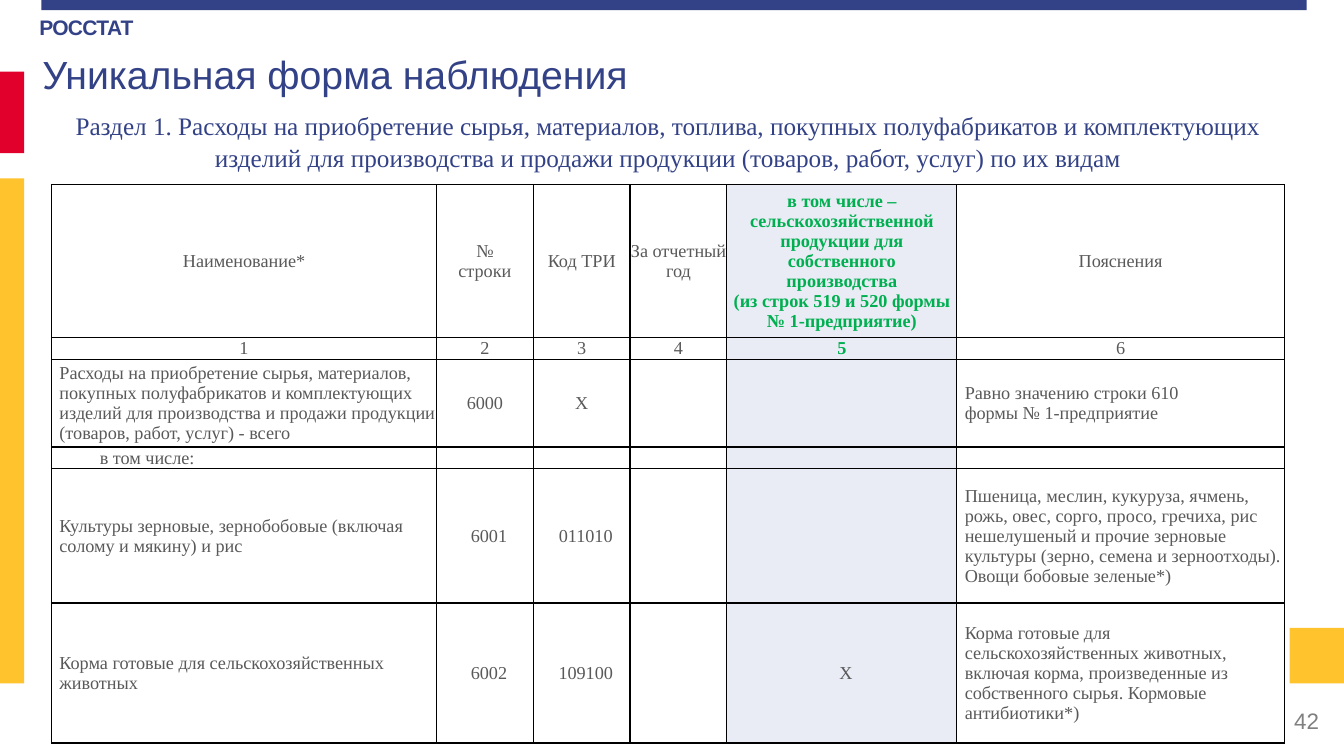
from lxml import etree
from pptx import Presentation
from pptx.dml.color import RGBColor
from pptx.enum.shapes import MSO_SHAPE
from pptx.enum.text import MSO_ANCHOR, MSO_AUTO_SIZE, PP_ALIGN
from pptx.oxml.ns import qn
from pptx.util import Inches, Pt

LEFT, CENTER, RIGHT = PP_ALIGN.LEFT, PP_ALIGN.CENTER, PP_ALIGN.RIGHT
MIDDLE = MSO_ANCHOR.MIDDLE
RECT = MSO_SHAPE.RECTANGLE

NAVY = RGBColor(0x33, 0x42, 0x86)
RED = RGBColor(0xE1, 0x00, 0x2B)
YELLOW = RGBColor(0xFF, 0xC3, 0x2E)
GRAY = RGBColor(0x80, 0x80, 0x80)
DARK_GRAY = RGBColor(0x59, 0x59, 0x59)
GREEN = RGBColor(0x00, 0xB0, 0x50)
PALE_BLUE = RGBColor(0xE9, 0xEB, 0xF5)
WHITE = RGBColor(0xFF, 0xFF, 0xFF)

SANS, SERIF = "Arial", "Times New Roman"
CELL_SIZE = 13


def write(p, text, align, font, size, color, bold=False):
    p.text = text
    p.alignment = align
    for r in p.runs:
        for name, value in dict(name=font, size=Pt(size), bold=bold).items():
            setattr(r.font, name, value)
        r.font.color.rgb = color


def add_borders(cell):
    """Give all four sides a thin black line, placed before the cell fill."""
    tc_pr = cell._tc.get_or_add_tcPr()
    for i, side in enumerate(("lnL", "lnR", "lnT", "lnB")):
        ln = etree.Element(qn(f"a:{side}"), w=str(Pt(1)))
        fill = etree.SubElement(ln, qn("a:solidFill"))
        etree.SubElement(fill, qn("a:srgbClr"), val="000000")
        tc_pr.insert(i, ln)


prs = Presentation()
prs.slide_width, prs.slide_height = Inches(13.33), Inches(7.5)
s = prs.slides.add_slide(prs.slide_layouts[1])

# Coloured bars at the edges
for x, y, w, h, color in [
    (0.41, 0, 12.55, 0.1, NAVY),
    (0, 0.71, 0.24, 0.81, RED),
    (0, 1.77, 0.24, 5.01, YELLOW),
    (12.79, 6.23, 0.54, 0.55, YELLOW),
]:
    bar = s.shapes.add_shape(RECT, Inches(x), Inches(y), Inches(w), Inches(h))
    bar.shadow.inherit = False
    bar.fill.solid()
    bar.fill.fore_color.rgb = color
    bar.line.fill.background()

# Agency name and page number
agency = s.shapes.add_textbox(Inches(0.39), Inches(0.13), Inches(1.15), Inches(0.32))
tf = agency.text_frame
tf.word_wrap = True
tf.margin_left = tf.margin_right = tf.margin_bottom = 0
tf.margin_top = Inches(0.01)
write(tf.paragraphs[0], "РОССТАТ", LEFT, SANS, 15, NAVY, True)
tf.paragraphs[0].runs[0].font._element.set("spc", "-50")

page = s.shapes.add_textbox(Inches(10.18), Inches(6.95), Inches(3), Inches(0.4))
page.text_frame.word_wrap = True
page.text_frame.vertical_anchor = MIDDLE
write(page.text_frame.paragraphs[0], "42", RIGHT, SANS, 16, GRAY)

# Title and section heading
section = (
    "Раздел 1. Расходы на приобретение сырья, материалов, топлива, покупных "
    "полуфабрикатов и комплектующих изделий для производства и продажи продукции "
    "(товаров, работ, услуг) по их видам"
)
for sp, y, h, text, align, font, size in [
    (s.shapes.title, 0.42, 0.6, "Уникальная форма наблюдения", LEFT, SANS, 28),
    (s.placeholders[1], 1.02, 0.74, section, CENTER, SERIF, 18),
]:
    sp.left, sp.top = Inches(0.32), Inches(y)
    sp.width, sp.height = Inches(12.61), Inches(h)
    tf = sp.text_frame
    tf.word_wrap = True
    tf.auto_size = MSO_AUTO_SIZE.NONE
    tf.vertical_anchor = MIDDLE
    p = tf.paragraphs[0]
    p_pr = p._p.get_or_add_pPr()
    p_pr.set("marL", "0")
    p_pr.set("indent", "0")
    etree.SubElement(p_pr, qn("a:buNone"))
    write(p, text, align, font, size, NAVY)
    p.space_before = Pt(0)
    if sp is not s.shapes.title:
        p.line_spacing = 1.07

# Survey form table: each cell is a list of paragraphs
rows = [
    [["Наименование*"], ["№\vстроки"], ["Код ТРИ"], ["За отчетный год"],
     ["в том числе – сельскохозяйственной продукции для собственного",
      "производства", "(из строк 519 и 520 формы", "№ 1-предприятие)"],
     ["Пояснения"]],
    [[str(n)] for n in range(1, 7)],
    [["Расходы на приобретение сырья, материалов, покупных полуфабрикатов и "
      "комплектующих изделий для производства и продажи продукции "
      "(товаров, работ, услуг) - всего"],
     ["6000"], ["Х"], [""], [""],
     ["Равно значению строки 610", "формы № 1-предприятие"]],
    [["в том числе:"], [""], [""], [""], [""], [""]],
    [["Культуры зерновые, зернобобовые (включая солому и мякину) и рис"],
     ["6001"], ["011010"], [""], [""],
     ["Пшеница, меслин, кукуруза, ячмень, рожь, овес, сорго, просо, гречиха, рис "
      "нешелушеный и прочие зерновые культуры (зерно, семена и зерноотходы). "
      "Овощи бобовые зеленые*)"]],
    [["Корма готовые для сельскохозяйственных животных"],
     ["6002"], ["109100"], [""], ["X"],
     ["Корма готовые для сельскохозяйственных животных, включая корма, "
      "произведенные из собственного сырья. Кормовые антибиотики*)"]],
]
col_widths = [3.82, 0.96, 0.96, 0.96, 2.28, 3.25]
row_heights = [1.39, 0.19, 0.79, 0.19, 1.33, 1.39]
HEADER_ROWS, SUBHEAD_ROW, FARM_COL = 2, 3, 4
TEXT_COLS = (0, 5)

table = s.shapes.add_table(
    len(rows), len(col_widths), Inches(0.51), Inches(1.83),
    Inches(sum(col_widths)), Inches(sum(row_heights)),
).table
table.first_row = table.horz_banding = False
for col, width in zip(table.columns, col_widths):
    col.width = Inches(width)
for row, height in zip(table.rows, row_heights):
    row.height = Inches(height)

for i, row in enumerate(rows):
    for j, paragraphs in enumerate(row):
        cell = table.cell(i, j)
        cell.margin_left = cell.margin_right = cell.margin_top = cell.margin_bottom = 0
        cell.vertical_anchor = MIDDLE
        cell.fill.solid()
        cell.fill.fore_color.rgb = PALE_BLUE if j == FARM_COL else WHITE
        add_borders(cell)
        header = i < HEADER_ROWS
        green = header and j == FARM_COL
        align = LEFT if j in TEXT_COLS and not header else CENTER
        if i == SUBHEAD_ROW:
            indent = 0.48
        else:
            indent = 0.08 if align == LEFT or i > SUBHEAD_ROW else 0
        for k, text in enumerate(paragraphs):
            p = cell.text_frame.paragraphs[0] if k == 0 else cell.text_frame.add_paragraph()
            p._p.get_or_add_pPr().set("marL", str(Inches(indent)))
            write(p, text, align, SERIF, CELL_SIZE, GREEN if green else DARK_GRAY, green)
            if not text:
                etree.SubElement(p._p, qn("a:endParaRPr"), sz=str(CELL_SIZE * 100))

prs.save("out.pptx")
